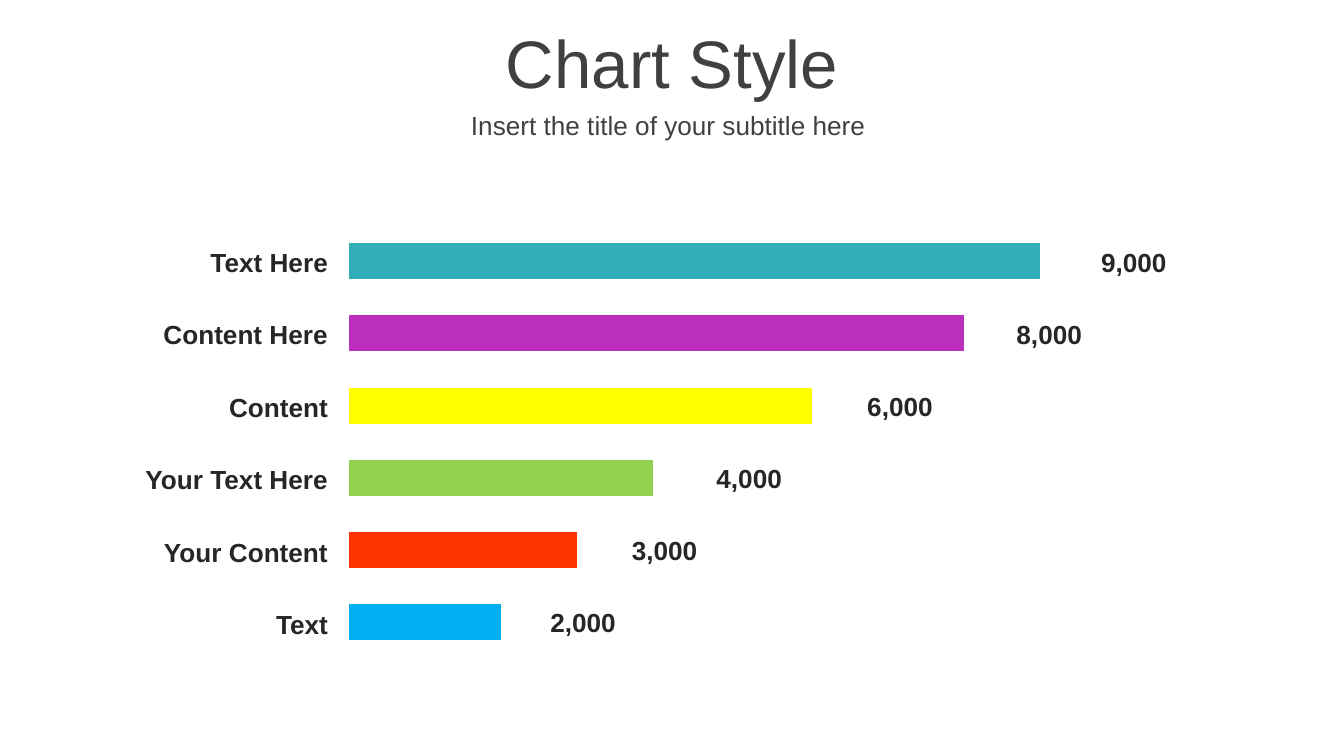
from lxml.etree import SubElement
from pptx import Presentation
from pptx.chart.data import CategoryChartData
from pptx.dml.color import RGBColor
from pptx.enum.chart import XL_CHART_TYPE
from pptx.enum.text import MSO_ANCHOR, MSO_AUTO_SIZE, PP_ALIGN
from pptx.oxml.ns import qn
from pptx.util import Cm, Pt

HEADING = RGBColor(0x40, 0x40, 0x40)
LABEL = RGBColor(0x26, 0x26, 0x26)
TEAL = RGBColor(0x32, 0xAE, 0xB8)
PURPLE = RGBColor(0xBC, 0x2E, 0xBC)
YELLOW = RGBColor(0xFF, 0xFF, 0x00)
GREEN = RGBColor(0x92, 0xD0, 0x50)
RED = RGBColor(0xFF, 0x33, 0x00)
BLUE = RGBColor(0x00, 0xB0, 0xF0)

# Top to bottom: label, bar value, bar colour, value text, left of value text in cm
ROWS = [
    ("Text Here", 100, TEAL, "9,000", 20.27),
    ("Content Here", 89, PURPLE, "8,000", 18.67),
    ("Content", 67, YELLOW, "6,000", 15.85),
    ("Your Text Here", 44, GREEN, "4,000", 13.0),
    ("Your Content", 33, RED, "3,000", 11.4),
    ("Text", 22, BLUE, "2,000", 9.86),
]
FIRST_ROW_TOP = 4.52
LABEL_PITCH = 1.37
VALUE_PITCH = 1.36


def write_text(shape, text, size, color, alignment, bold=False):
    frame = shape.text_frame
    frame.text = text
    frame.word_wrap = True
    frame.auto_size = MSO_AUTO_SIZE.NONE
    frame.vertical_anchor = MSO_ANCHOR.MIDDLE
    paragraph = frame.paragraphs[0]
    paragraph.alignment = alignment
    font = paragraph.runs[0].font
    font.name = "Arial"
    font.size = Pt(size)
    font.bold = bold
    font.color.rgb = color


presentation = Presentation()
presentation.slide_width = Cm(25.4)
presentation.slide_height = Cm(14.29)
slide = presentation.slides.add_slide(presentation.slide_layouts[5])

# Headings
title = slide.shapes.title
title.left, title.top, title.width, title.height = Cm(0), Cm(0.36), Cm(25.4), Cm(1.6)
write_text(title, "Chart Style", 36, HEADING, PP_ALIGN.CENTER)
subtitle = slide.shapes.add_textbox(Cm(0), Cm(1.96), Cm(25.4), Cm(0.79))
write_text(subtitle, "Insert the title of your subtitle here ", 14, HEADING, PP_ALIGN.CENTER)

# Bar chart: the first category is drawn at the bottom
bars = ROWS[::-1]
chart_data = CategoryChartData()
chart_data.categories = [str(number) for number in range(1, len(bars) + 1)]
chart_data.add_series("Series 1", [value for _, value, *_ in bars])
chart = slide.shapes.add_chart(
    XL_CHART_TYPE.BAR_STACKED, Cm(6.25), Cm(3.96), Cm(15.01), Cm(8.79), chart_data
).chart
chart.has_legend = False
chart.has_title = False
chart.font.name = "Arial"
chart.font.size = Pt(18)
chart.category_axis.visible = False
chart.value_axis.visible = False
chart.value_axis.has_major_gridlines = False
chart.value_axis.minimum_scale = 0
chart.value_axis.maximum_scale = 111

plot = chart.plots[0]
plot.gap_width = 100
plot.overlap = 100
plot.vary_by_categories = False
for index, (_, _, color, *_) in enumerate(bars):
    fill = plot.series[0].points[index].format.fill
    fill.solid()
    fill.fore_color.rgb = color

# Fixed inner plot area
plot_area = chart.element.find(".//" + qn("c:plotArea"))
layout = plot_area.find(qn("c:layout"))
if layout is None:
    layout = SubElement(plot_area, qn("c:layout"))
    plot_area.insert(0, layout)
manual = SubElement(layout, qn("c:manualLayout"))
for tag, setting in [
    ("layoutTarget", "inner"), ("xMode", "edge"), ("yMode", "edge"),
    ("x", "0.023"), ("y", "0.034"), ("w", "0.966"), ("h", "0.931"),
]:
    SubElement(manual, qn("c:" + tag)).set("val", setting)

# Row labels and values
for row, (label, _, _, value_text, value_left) in enumerate(ROWS):
    label_top = FIRST_ROW_TOP + row * LABEL_PITCH
    value_top = FIRST_ROW_TOP + row * VALUE_PITCH
    for text, left, top, width in [
        (label, 2.26, label_top, 4.19),
        (value_text, value_left, value_top, 2.03),
    ]:
        box = slide.shapes.add_textbox(Cm(left), Cm(top), Cm(width), Cm(0.86))
        write_text(box, text, 14, LABEL, PP_ALIGN.RIGHT, bold=True)

presentation.save("out.pptx")
